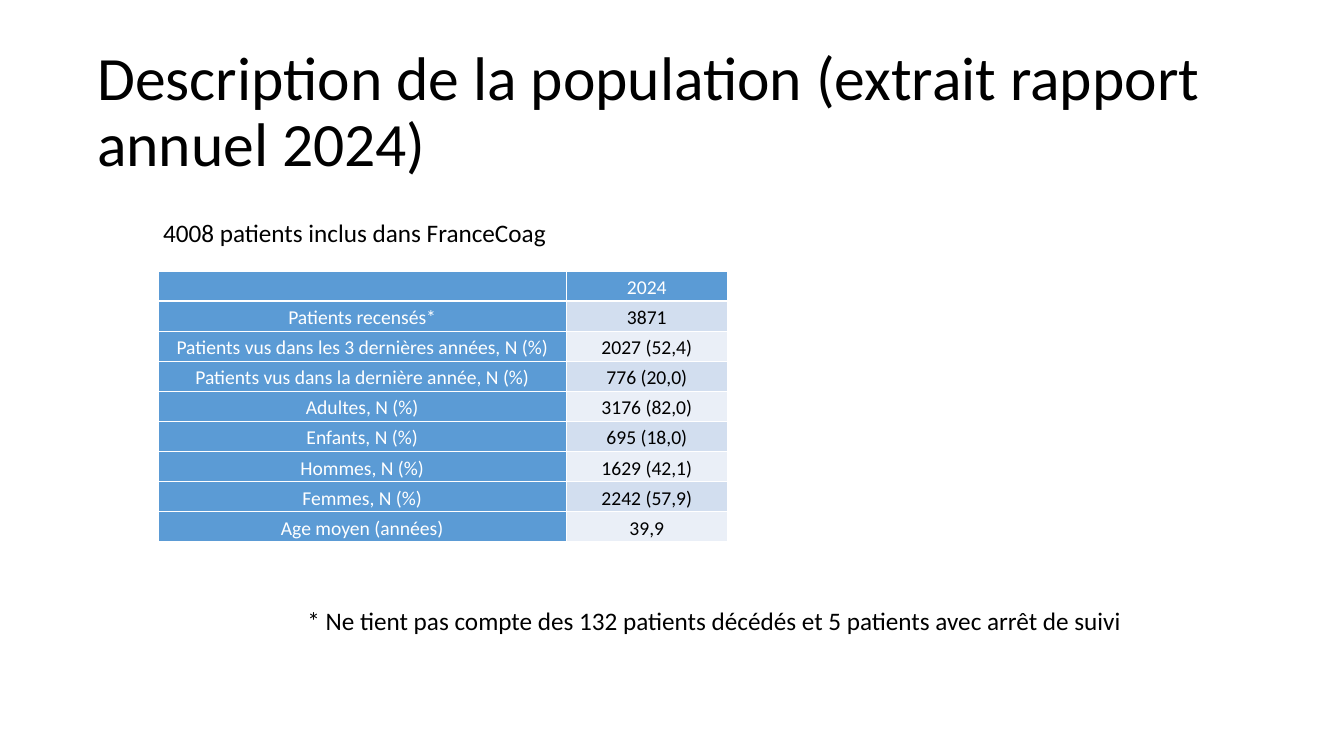
from lxml import etree
from pptx import Presentation
from pptx.dml.color import RGBColor
from pptx.enum.text import MSO_ANCHOR, MSO_AUTO_SIZE, PP_ALIGN
from pptx.oxml.ns import qn
from pptx.util import Inches, Pt

CENTER = PP_ALIGN.CENTER
MIDDLE = MSO_ANCHOR.MIDDLE
FIT_SHAPE = MSO_AUTO_SIZE.SHAPE_TO_FIT_TEXT
FIT_NONE = MSO_AUTO_SIZE.NONE

FONT = "Calibri"
COLORS = {
    "text": "000000",
    "white": "FFFFFF",
    "header": "5B9BD5",
    "odd": "D2DEEF",
    "even": "EAEFF7",
}
POPULATION = [
    ("", "2024"),
    ("Patients recensés*", "3871"),
    ("Patients vus dans les 3 dernières années, N (%)", "2027 (52,4)"),
    ("Patients vus dans la dernière année, N (%)", "776 (20,0)"),
    ("Adultes, N (%)", "3176 (82,0)"),
    ("Enfants, N (%)", "695 (18,0)"),
    ("Hommes, N (%)", "1629 (42,1)"),
    ("Femmes, N (%)", "2242 (57,9)"),
    ("Age moyen (années)", "39,9"),
]
COLUMN_WIDTHS = (8.09, 3.21)
TABLE_HEIGHT = 5.37


def rgb(name):
    return RGBColor.from_string(COLORS[name])


def write(frame, text, size, color):
    frame.text = text
    paragraph = frame.paragraphs[0]
    paragraph.font.size = Pt(size)
    for run in paragraph.runs:
        run.font.name = FONT
        run.font.size = Pt(size)
        run.font.color.rgb = rgb(color)
    return paragraph


def add_title(slide, text):
    frame = slide.shapes.add_textbox(Inches(1.83), Inches(0.8), Inches(23), Inches(2.9)).text_frame
    frame.word_wrap = True
    frame.auto_size = FIT_NONE
    frame.vertical_anchor = MIDDLE
    write(frame, text, 88, "text").line_spacing = 0.9


def add_note(slide, text, left, top, width):
    frame = slide.shapes.add_textbox(Inches(left), Inches(top), Inches(width), Inches(0.71)).text_frame
    frame.word_wrap = False
    frame.auto_size = FIT_SHAPE
    write(frame, text, 36, "text")


def set_borders(cell, bottom):
    properties = cell._tc.get_or_add_tcPr()
    for side, width in (("L", 1), ("R", 1), ("T", 1), ("B", bottom)):
        line = etree.SubElement(properties, qn(f"a:ln{side}"), w=str(Pt(width)))
        fill = etree.SubElement(line, qn("a:solidFill"))
        etree.SubElement(fill, qn("a:srgbClr"), val=COLORS["white"])


def fill_cell(cell, text, row, column):
    is_header = row == 0 or column == 0
    band = "odd" if row % 2 else "even"
    set_borders(cell, 3 if row == 0 else 1)
    cell.fill.solid()
    cell.fill.fore_color.rgb = rgb("header" if is_header else band)
    cell.margin_left = cell.margin_right = Inches(0.15)
    cell.margin_top = cell.margin_bottom = 0
    cell.vertical_anchor = MIDDLE
    paragraph = write(cell.text_frame, text, 28, "white" if is_header else "text")
    paragraph.alignment = CENTER
    paragraph.line_spacing = 1.15


def add_population_table(slide):
    table = slide.shapes.add_table(
        len(POPULATION), len(COLUMN_WIDTHS), Inches(3.14), Inches(5.38),
        Inches(sum(COLUMN_WIDTHS)), Inches(TABLE_HEIGHT),
    ).table
    table.first_row = table.horz_banding = False
    for column, width in zip(table.columns, COLUMN_WIDTHS):
        column.width = Inches(width)
    for row, values in enumerate(POPULATION):
        for column, text in enumerate(values):
            fill_cell(table.cell(row, column), text, row, column)


def main():
    presentation = Presentation()
    presentation.slide_width = Inches(26.67)
    presentation.slide_height = Inches(15)
    slide = presentation.slides.add_slide(presentation.slide_layouts[6])
    add_title(slide, "Description de la population (extrait rapport annuel 2024)")
    add_population_table(slide)
    add_note(slide, "* Ne tient pas compte des 132 patients décédés et 5 patients avec arrêt de suivi", 6, 11.96, 16.5)
    add_note(slide, "4008 patients inclus dans FranceCoag", 3.14, 4.26, 7.87)
    presentation.save("out.pptx")


if __name__ == "__main__":
    main()
